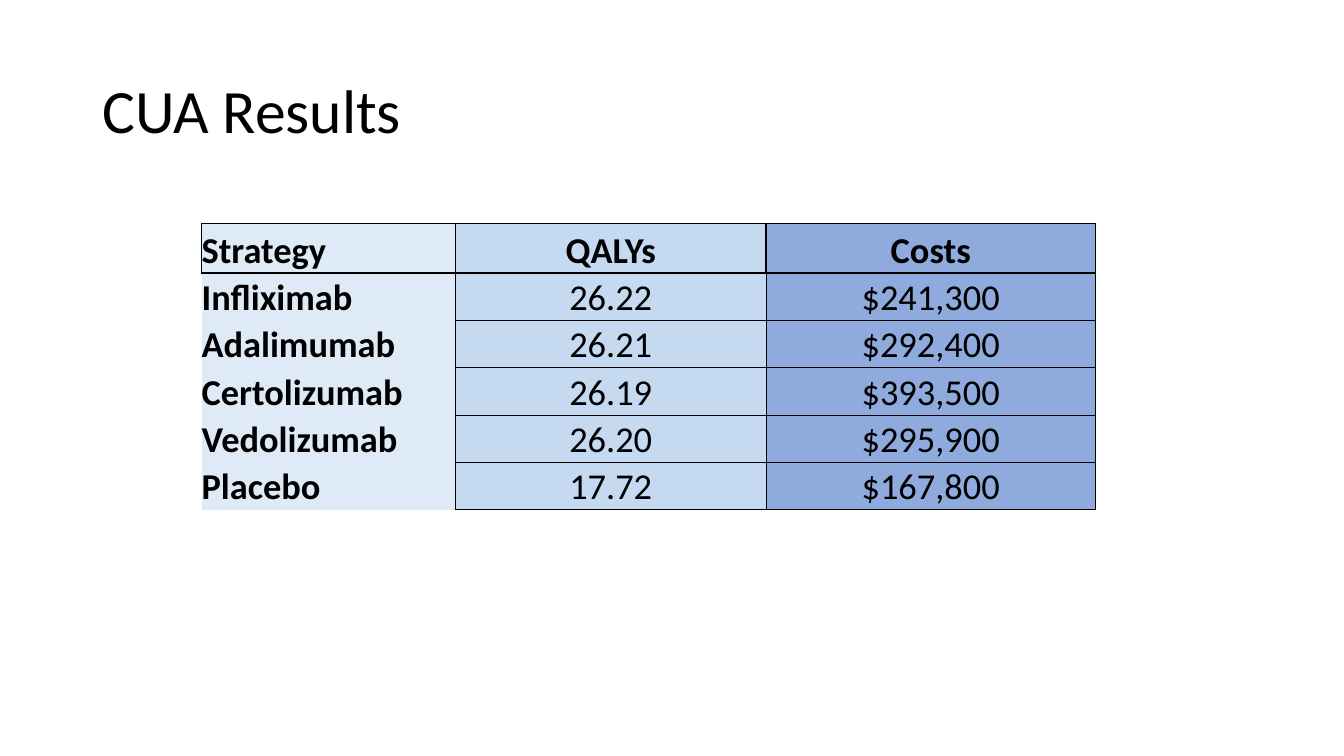
from dataclasses import dataclass

from lxml.etree import SubElement
from pptx import Presentation
from pptx.dml.color import RGBColor
from pptx.enum.text import MSO_VERTICAL_ANCHOR as Anchor, PP_PARAGRAPH_ALIGNMENT as Align
from pptx.oxml.ns import qn
from pptx.util import Pt


@dataclass(frozen=True)
class Theme:
    font: str = "Calibri"
    ink: str = "000000"
    column_fills: tuple = ("DEEBF7", "C5D9F1", "8FAADC")
    title_size: float = 44
    table_size: float = 26
    thin: float = 0.5
    thick: float = 1


THEME = Theme()
TITLE_BOX = (66, 28.8, 828, 104.4)
TABLE_BOX = (144, 159.84, 638.64, 204.4)
COLUMN_WIDTHS = (181.44, 221.76, 235.44)
HEADER_HEIGHT = 35.2
RESULTS = (
    ("Strategy", "QALYs", "Costs"),
    ("Infliximab", "26.22", "$241,300"),
    ("Adalimumab", "26.21", "$292,400"),
    ("Certolizumab", "26.19", "$393,500"),
    ("Vedolizumab", "26.20", "$295,900"),
    ("Placebo", "17.72", "$167,800"),
)


def add_run(paragraph, text, size, bold=False):
    run = paragraph.add_run()
    run.text = text
    run.font.name = THEME.font
    run.font.size = Pt(size)
    run.font.bold = bold
    run.font.color.rgb = RGBColor.from_string(THEME.ink)


def add_title(slide, box, text):
    shape = slide.shapes.add_textbox(*map(Pt, box))
    frame = shape.text_frame
    frame.word_wrap = True
    frame.vertical_anchor = Anchor.MIDDLE
    paragraph = frame.paragraphs[0]
    paragraph.line_spacing = 0.9
    add_run(paragraph, text, THEME.title_size)


def border_widths(row, column, last_column):
    """Give the left, right, top and bottom widths; zero means no line."""
    thin, thick = THEME.thin, THEME.thick
    if row == 0:
        return (thick if column else thin,
                thin if column == last_column else thick, thin, thick)
    top = thick if row == 1 else thin
    if column == 0:
        return 0, thin, thick if row == 1 else 0, 0
    return thin, thin, top, thin


def set_borders(cell, widths):
    properties = cell._tc.get_or_add_tcPr()
    for side, width in zip(("lnL", "lnR", "lnT", "lnB"), widths):
        line = SubElement(properties, qn(f"a:{side}"), w=str(Pt(width)))
        if width:
            fill = SubElement(line, qn("a:solidFill"))
            SubElement(fill, qn("a:srgbClr"), val=THEME.ink)
        else:
            SubElement(line, qn("a:noFill"))


def fill_cell(cell, text, row, column):
    set_borders(cell, border_widths(row, column, len(COLUMN_WIDTHS) - 1))
    cell.fill.solid()
    cell.fill.fore_color.rgb = RGBColor.from_string(THEME.column_fills[column])
    cell.margin_left = cell.margin_right = cell.margin_top = cell.margin_bottom = 0
    cell.vertical_anchor = Anchor.BOTTOM
    paragraph = cell.text_frame.paragraphs[0]
    paragraph.alignment = Align.CENTER if column else Align.LEFT
    add_run(paragraph, text, THEME.table_size, bold=row == 0 or column == 0)


def add_results_table(slide, box, results):
    frame = slide.shapes.add_table(len(results), len(COLUMN_WIDTHS), *map(Pt, box))
    table = frame.table
    table.first_row = table.horz_banding = False
    for column, width in zip(table.columns, COLUMN_WIDTHS):
        column.width = Pt(width)
    body_height = (box[3] - HEADER_HEIGHT) / (len(results) - 1)
    for row, values in enumerate(results):
        table.rows[row].height = Pt(body_height if row else HEADER_HEIGHT)
        for column, text in enumerate(values):
            fill_cell(table.cell(row, column), text, row, column)


def main():
    presentation = Presentation()
    presentation.slide_width = Pt(960)
    presentation.slide_height = Pt(540)
    slide = presentation.slides.add_slide(presentation.slide_layouts[6])
    add_title(slide, TITLE_BOX, "CUA Results")
    add_results_table(slide, TABLE_BOX, RESULTS)
    presentation.save("out.pptx")


if __name__ == "__main__":
    main()
